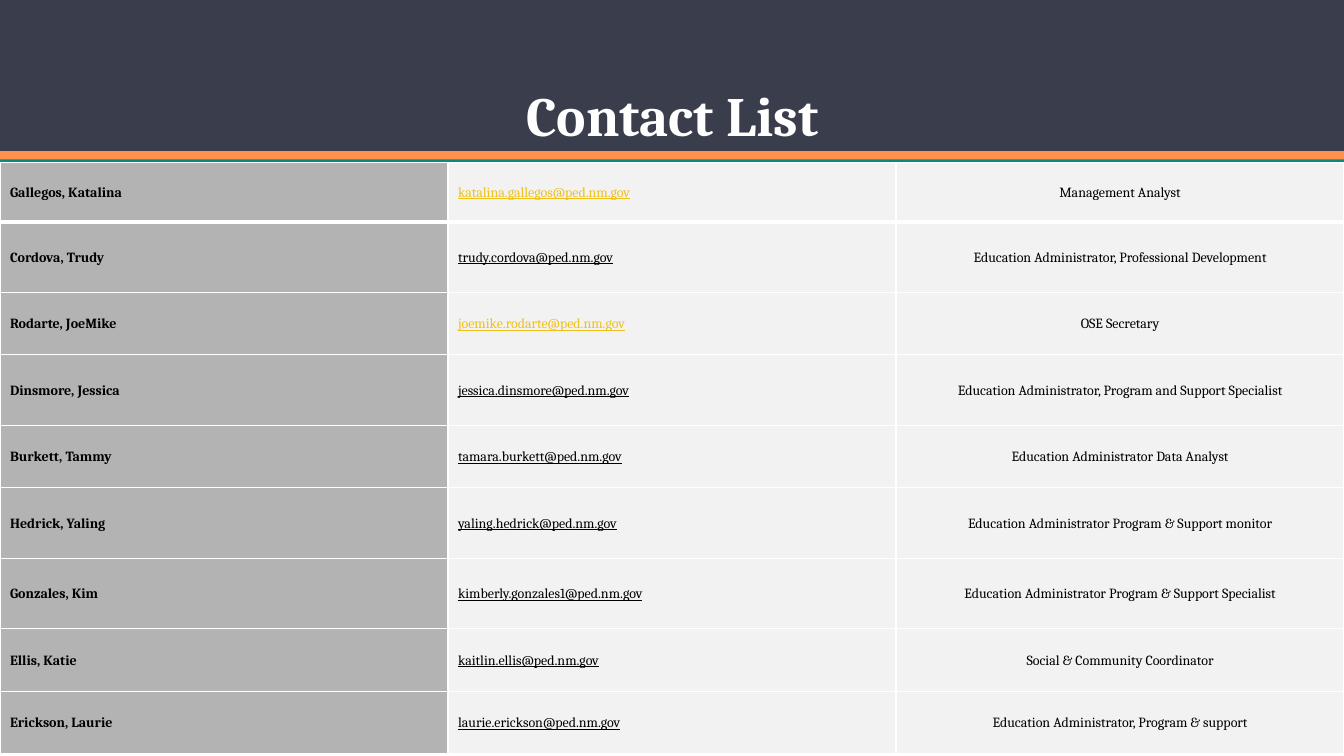
import pptx
import pptx.util
import pptx.dml.color
import pptx.enum.shapes
import pptx.enum.text
import pptx.oxml
import pptx.oxml.ns

Inches = pptx.util.Inches
Pt = pptx.util.Pt
RGBColor = pptx.dml.color.RGBColor
Align = pptx.enum.text.PP_ALIGN
Anchor = pptx.enum.text.MSO_ANCHOR

WHITE = RGBColor(0xFF, 0xFF, 0xFF)
BLACK = RGBColor(0x00, 0x00, 0x00)
NAVY = RGBColor(0x3A, 0x3D, 0x4B)
ORANGE = RGBColor(0xFF, 0x91, 0x4D)
TEAL = RGBColor(0x04, 0x8A, 0x81)
GOLD = RGBColor(0xEF, 0xC1, 0x19)
GREY = RGBColor(0xB3, 0xB3, 0xB3)
PALE = RGBColor(0xF2, 0xF2, 0xF2)

WIDTH, HEIGHT = 13.33, 7.5

CONTACTS = [
    ("Gallegos, Katalina", "katalina.gallegos@ped.nm.gov", "Management Analyst"),
    ("Cordova, Trudy", "trudy.cordova@ped.nm.gov", "Education Administrator, Professional Development"),
    ("Rodarte, JoeMike", "joemike.rodarte@ped.nm.gov", "OSE Secretary"),
    ("Dinsmore, Jessica", "jessica.dinsmore@ped.nm.gov", "Education Administrator, Program and Support Specialist"),
    ("Burkett, Tammy", "tamara.burkett@ped.nm.gov", "Education Administrator Data Analyst"),
    ("Hedrick, Yaling", "yaling.hedrick@ped.nm.gov", "Education Administrator Program & Support monitor"),
    ("Gonzales, Kim", "kimberly.gonzales1@ped.nm.gov", "Education Administrator Program & Support Specialist"),
    ("Ellis, Katie", "kaitlin.ellis@ped.nm.gov", "Social & Community Coordinator"),
    ("Erickson, Laurie", "laurie.erickson@ped.nm.gov", "Education Administrator, Program & support"),
]
ROW_HEIGHTS = [0.59, 0.7, 0.62, 0.7, 0.62, 0.7, 0.7, 0.62, 0.62]
GOLD_ROWS = (0, 2)


class ContactSlide:
    font_name = "Cambria"

    def __init__(self, slide):
        self.slide = slide

    def band(self, top, height, color):
        shape = self.slide.shapes.add_shape(
            pptx.enum.shapes.MSO_SHAPE.RECTANGLE,
            Inches(0), Inches(top), Inches(WIDTH), Inches(height))
        shape.shadow.inherit = False
        shape.fill.solid()
        shape.fill.fore_color.rgb = color
        shape.line.fill.background()

    def set_text(self, text_frame, text, size, color, alignment, spacing, bold=False, underline=False):
        text_frame.text = text
        paragraph = text_frame.paragraphs[0]
        paragraph.alignment = alignment
        paragraph.line_spacing = spacing
        font = paragraph.runs[0].font
        font.name = self.font_name
        font.size = Pt(size)
        font.color.rgb = color
        font.bold = bold
        font.underline = underline

    def title(self, text):
        box = self.slide.shapes.add_textbox(Inches(1.42), Inches(0.75), Inches(10.5), Inches(0.77))
        box.text_frame.word_wrap = True
        box.text_frame.vertical_anchor = Anchor.BOTTOM
        self.set_text(box.text_frame, text, 39.6, WHITE, Align.CENTER, 0.9, bold=True)

    def borders(self, cell, widths):
        properties = cell._tc.get_or_add_tcPr()
        for index, (side, width) in enumerate(widths.items()):
            properties.insert(index, pptx.oxml.parse_xml(
                f'<a:{side} {pptx.oxml.ns.nsdecls("a")} w="{Pt(width)}"><a:solidFill>'
                f'<a:srgbClr val="{WHITE}"/></a:solidFill></a:{side}>'))

    def contact_table(self, top):
        table = self.slide.shapes.add_table(
            len(CONTACTS), 3, Inches(0), Inches(top), Inches(WIDTH), Inches(HEIGHT - top)).table
        for column in table.columns:
            column.width = Inches(WIDTH / 3)
        for row_index, (contact, row_height) in enumerate(zip(CONTACTS, ROW_HEIGHTS)):
            table.rows[row_index].height = Inches(row_height)
            for column_index, text in enumerate(contact):
                is_name, is_email = column_index == 0, column_index == 1
                cell = table.cell(row_index, column_index)
                cell.vertical_anchor = Anchor.MIDDLE
                cell.fill.solid()
                cell.fill.fore_color.rgb = GREY if is_name else PALE
                self.set_text(
                    cell.text_frame, text, 10,
                    GOLD if is_email and row_index in GOLD_ROWS else BLACK,
                    Align.CENTER if column_index == 2 else Align.LEFT,
                    1.07, bold=is_name, underline=is_email)
                self.borders(cell, {
                    "lnL": 1, "lnR": 1,
                    "lnT": 3 if row_index == 1 else 1,
                    "lnB": 3 if row_index == 0 else 1})


def main():
    presentation = pptx.Presentation()
    presentation.slide_width = Inches(WIDTH)
    presentation.slide_height = Inches(HEIGHT)
    contact_slide = ContactSlide(presentation.slides.add_slide(presentation.slide_layouts[6]))
    contact_slide.band(0, 1.5, NAVY)
    contact_slide.band(1.5, 0.09, ORANGE)
    contact_slide.band(1.58, 0.09, TEAL)
    contact_slide.title("Contact List")
    contact_slide.contact_table(1.61)
    presentation.save("out.pptx")


if __name__ == "__main__":
    main()
